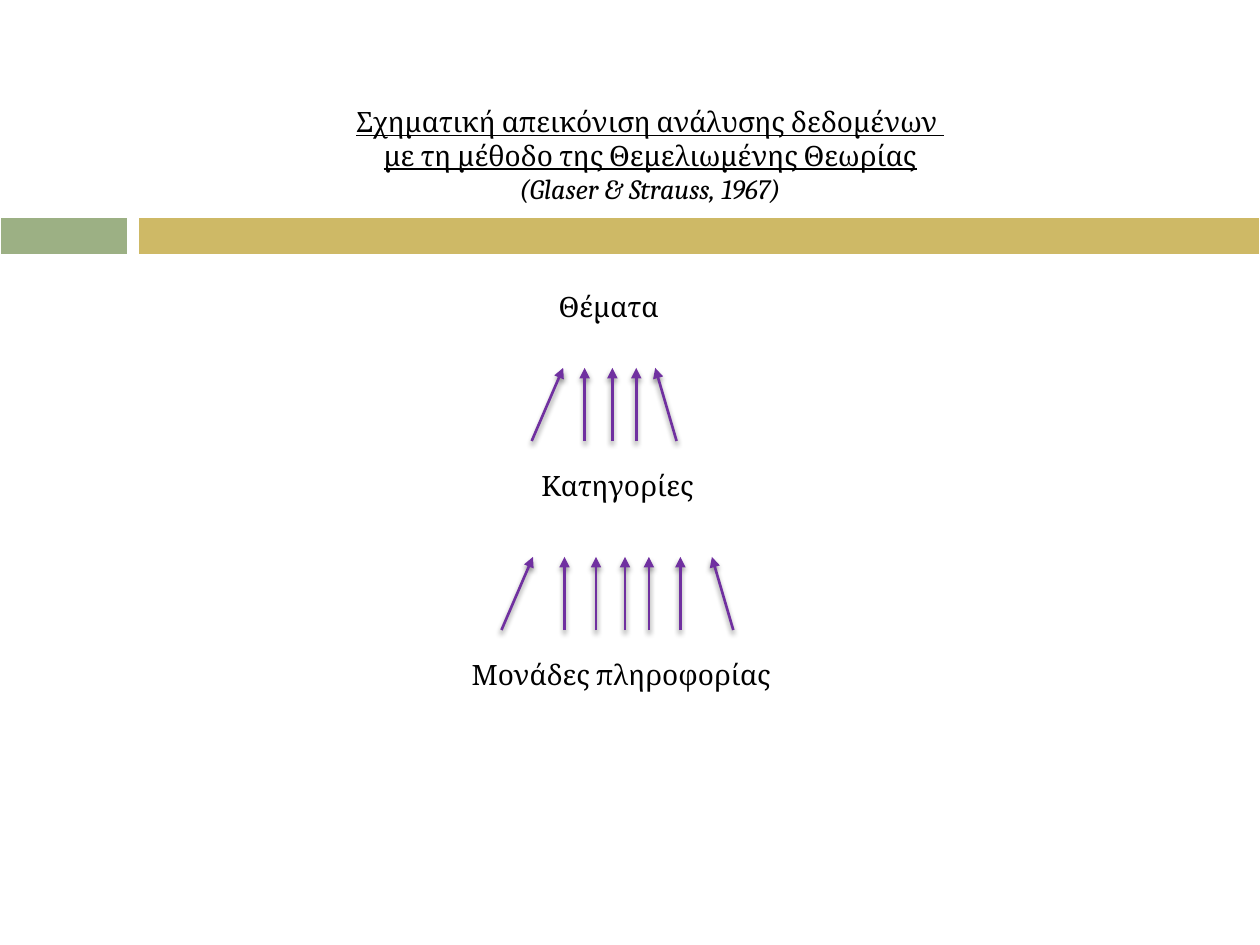
from pptx import Presentation
from pptx.dml.color import RGBColor
from pptx.enum.shapes import MSO_CONNECTOR, MSO_SHAPE
from pptx.enum.text import MSO_ANCHOR, PP_ALIGN
from pptx.oxml import parse_xml
from pptx.oxml.ns import nsdecls
from pptx.util import Inches, Pt

FONT, SIZE = "Cambria", 16
INK, PURPLE, WHITE = "000000", "7030A0", "FFFFFF"
CENTER_X = 5.16

TITLE = [
    "Σχηματική απεικόνιση ανάλυσης δεδομένων ",
    "με τη μέθοδο της Θεμελιωμένης Θεωρίας",
    "(Glaser & Strauss, 1967)",
]
LEVELS = [
    ("Θέματα", 4.83, 2.25, 2.33),
    ("Κατηγορίες", 4.9, 3.67, 2.92),
    ("Μονάδες πληροφορίας", 4.93, 5.17, 3.47),
]
ARROW_RISE = 0.58
ARROW_GROUPS = [
    (5, [(3.98, 4.23), (4.48, 4.48), (4.73, 4.73), (4.96, 4.96),
         (5.15, 5.15), (5.4, 5.4), (5.82, 5.65)]),
    (3.5, [(4.22, 4.47), (4.64, 4.64), (4.86, 4.86), (5.05, 5.05), (5.37, 5.2)]),
]
BAND_TOP, BAND_HEIGHT = 1.72, 0.31
BANDS = [(1.09, 8.91, "CEB966"), (0, 1.02, "9CB084")]

SHADOW = (
    f'<a:effectLst {nsdecls("a")}><a:outerShdw blurRad="{Pt(3)}" dist="{Pt(2.4)}" '
    'dir="5400000" rotWithShape="0"><a:srgbClr val="000000">'
    '<a:alpha val="45000"/></a:srgbClr></a:outerShdw></a:effectLst>'
)
ARROWHEAD = f'<a:tailEnd {nsdecls("a")} type="triangle"/>'


def color(value):
    return RGBColor.from_string(value)


def add_text(slide, lines, center, top, width, height):
    box = slide.shapes.add_textbox(
        Inches(center - width / 2), Inches(top), Inches(width), Inches(height))
    box.text_frame.word_wrap = True
    para = box.text_frame.paragraphs[0]
    para.text = "\v".join(lines)
    para.alignment = PP_ALIGN.CENTER
    for span in para.runs:
        span.font.name, span.font.size = FONT, Pt(SIZE)
        span.font.color.rgb = color(INK)
    return box


def add_arrow(group, start_x, end_x, bottom):
    arrow = group.shapes.add_connector(
        MSO_CONNECTOR.STRAIGHT, Inches(start_x), Inches(bottom),
        Inches(end_x), Inches(bottom - ARROW_RISE))
    arrow.line.color.rgb = color(PURPLE)
    arrow.line.width = Pt(1.5)
    arrow.line._get_or_add_ln().append(parse_xml(ARROWHEAD))
    arrow._element.spPr.append(parse_xml(SHADOW))


def add_band(slide, left, width, fill):
    band = slide.shapes.add_shape(
        MSO_SHAPE.RECTANGLE, Inches(left), Inches(BAND_TOP),
        Inches(width), Inches(BAND_HEIGHT))
    band.shadow.inherit = False
    band.fill.solid()
    band.fill.fore_color.rgb = color(fill)
    band.line.color.rgb = color(WHITE)
    band.line.width = Pt(1.5)


def main():
    deck = Presentation()
    deck.slide_width, deck.slide_height = Inches(10), Inches(7.5)
    page = deck.slides.add_slide(deck.slide_layouts[6])

    title = add_text(page, TITLE, CENTER_X, 0.78, 7.97, 1.17)
    title.text_frame.vertical_anchor = MSO_ANCHOR.MIDDLE
    title.text_frame.margin_bottom = Inches(0.32)
    *headings, citation = title.text_frame.paragraphs[0].runs
    for span in headings:
        span.font.underline = True
    citation.font.italic = True

    for label, center, top, width in LEVELS:
        add_text(page, [label], center, top, width, 0.37)
    for bottom, arrows in ARROW_GROUPS:
        group = page.shapes.add_group_shape()
        for start_x, end_x in arrows:
            add_arrow(group, start_x, end_x, bottom)
    for band in BANDS:
        add_band(page, *band)

    deck.save("out.pptx")


if __name__ == "__main__":
    main()
